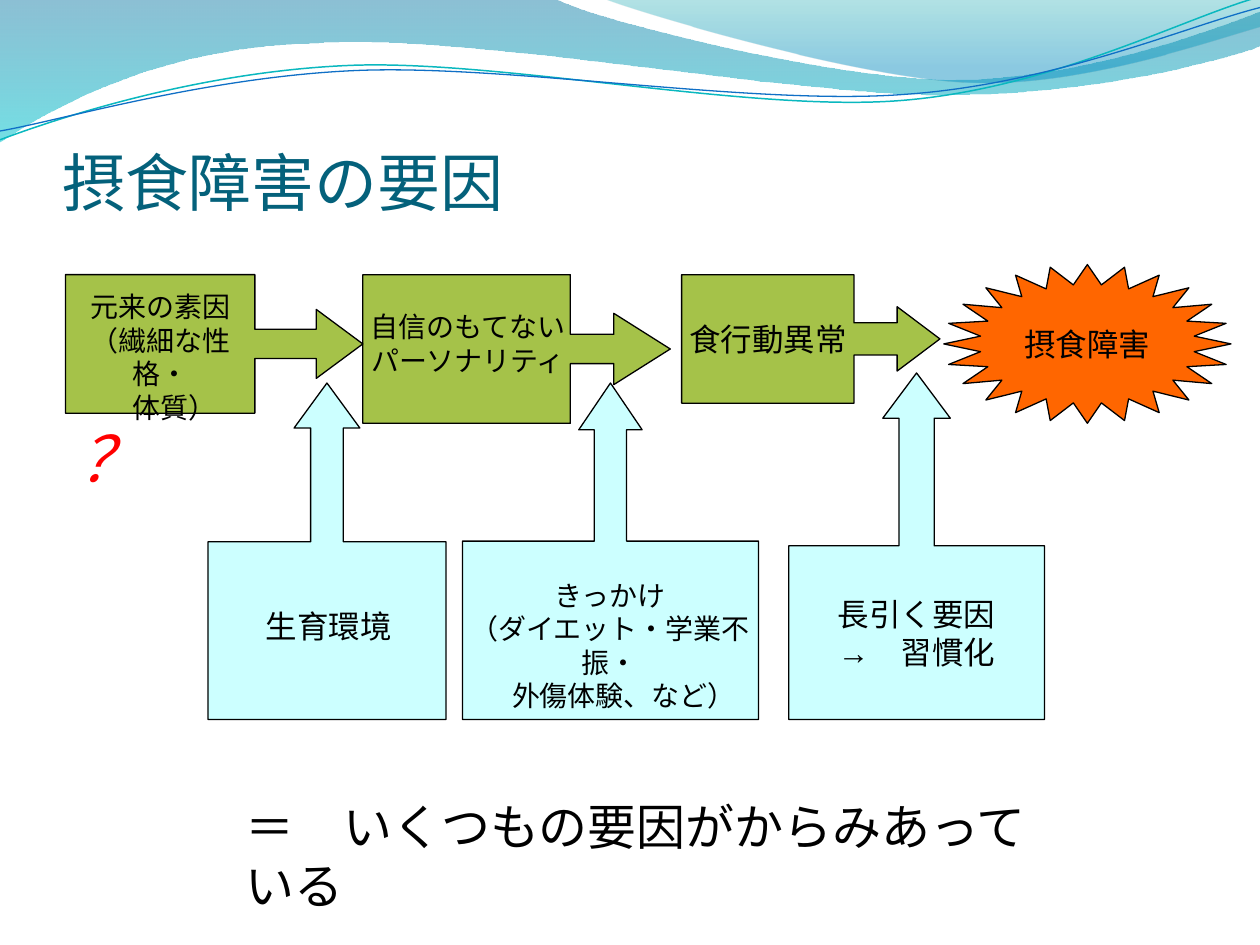
from lxml import etree
from pptx import Presentation
from pptx.dml.color import RGBColor
from pptx.enum.shapes import MSO_SHAPE
from pptx.enum.text import MSO_ANCHOR, MSO_AUTO_SIZE, PP_ALIGN
from pptx.oxml.ns import qn
from pptx.util import Inches, Pt

UP = MSO_SHAPE.UP_ARROW_CALLOUT
RIGHT = MSO_SHAPE.RIGHT_ARROW_CALLOUT
STAR = MSO_SHAPE.STAR_24_POINT
MIDDLE, TOP = MSO_ANCHOR.MIDDLE, MSO_ANCHOR.TOP
LEFT, CENTER = PP_ALIGN.LEFT, PP_ALIGN.CENTER
GROW = MSO_AUTO_SIZE.SHAPE_TO_FIT_TEXT

COLORS = {
    "cause": "A5C249", "factor": "CCFFFF", "result": "FF6600",
    "black": "000000", "title": "04617B", "question": "FF0000",
    "teal line": "0AB8BF", "blue line": "0F6FC6",
    "wave top": "0074A1", "wave bottom": "00C6CF",
    "crest top": "00A1A9", "crest bottom": "008BBF",
}


def color(name):
    return RGBColor.from_string(COLORS[name])


def write(shape, lines, size, font, ink="black", align=CENTER, **formats):
    frame = shape.text_frame
    for name, value in formats.items():
        setattr(frame, name, value)
    for index, line in enumerate(lines):
        paragraph = frame.paragraphs[0] if index == 0 else frame.add_paragraph()
        paragraph.alignment = align
        run = paragraph.add_run()
        run.text = line
        run.font.size = Pt(size)
        run.font.name = font
        run.font.color.rgb = color(ink)
        # Japanese characters take the East Asian font
        etree.SubElement(run.font._element, qn("a:ea")).set("typeface", font)


presentation = Presentation()
presentation.slide_width = Inches(10)
presentation.slide_height = Inches(7.5)
slide = presentation.slides.add_slide(presentation.slide_layouts[6])

# Waves: a pair is a straight segment, six numbers are a Bézier curve
waves = [
    {"outline": [(0, 0), (4.4, -0.01), (4.76, 0.17, 6.64, 0.63, 7.58, 0.63),
                 (8.53, 0.63, 9.58, 0.26, 10, 0.09), (10.01, 0.36),
                 (9.83, 0.44, 8.7, 0.76, 7.46, 0.75),
                 (6.22, 0.75, 3.82, 0.28, 2.57, 0.34),
                 (1.29, 0.36, 0.46, 0.83, -0.01, 1.13), (0, 0)],
     "stops": [(0, "wave top", 45), (1, "wave bottom", 55)]},
    {"outline": [(4.79, -0.01), (5.09, 0.11, 6.82, 0.62, 7.69, 0.65),
                 (8.56, 0.69, 9.61, 0.32, 10, 0.21), (10, 0), (4.79, -0.01)],
     "stops": [(0, "crest top", 30), (0.8, "crest bottom", 45)]},
    {"outline": [(0, 1.11), (0.48, 0.93, 1.58, 0.57, 2.77, 0.52),
                 (3.95, 0.47, 5.93, 0.89, 7.13, 0.8),
                 (8.33, 0.71, 9.38, 0.15, 9.98, -0.02)],
     "line": ("teal line", 0.85)},
    {"outline": [(0, 1.04), (0.47, 0.96, 1.64, 0.61, 2.83, 0.56),
                 (4.03, 0.51, 5.97, 0.84, 7.17, 0.75),
                 (8.36, 0.67, 9.41, 0.21, 10, 0.06)],
     "line": ("blue line", 0.75)},
]
for wave in waves:
    outline = wave["outline"]
    ends = [(Inches(segment[-2]), Inches(segment[-1])) for segment in outline]
    builder = slide.shapes.build_freeform(*ends[0])
    builder.add_line_segments(ends[1:], close="stops" in wave)
    shape = builder.convert_to_shape()
    shape.shadow.inherit = False
    # Turn the segments that have control points into curves
    segments = list(shape._element.iter(qn("a:lnTo")))
    for element, segment in zip(segments, outline[1:]):
        if len(segment) == 2:
            continue
        element.tag = qn("a:cubicBezTo")
        for index, (x, y) in enumerate((segment[:2], segment[2:4])):
            point = etree.Element(qn("a:pt"))
            point.set("x", str(Inches(x) - shape.left))
            point.set("y", str(Inches(y) - shape.top))
            element.insert(index, point)
    if "line" in wave:
        ink, width = wave["line"]
        shape.fill.background()
        shape.line.color.rgb = color(ink)
        shape.line.width = Pt(width)
        continue
    shape.line.fill.background()
    shape.fill.gradient()
    shape.fill.gradient_angle = 270
    for stop, (position, ink, opacity) in zip(shape.fill.gradient_stops, wave["stops"]):
        stop.color.rgb = color(ink)
        stop.position = position
    # Opacity of the gradient stops
    for element, stop in zip(shape._element.iter(qn("a:srgbClr")), wave["stops"]):
        etree.SubElement(element, qn("a:alpha")).set("val", str(stop[2] * 1000))

# Callouts and star: preset, fill, box, adjustments, own text
diagram = [
    (UP, "factor", (1.65, 3.04, 1.89, 2.67), (0.137, 0.138, 0.189, 0.528), []),
    (STAR, "result", (7.49, 2.1, 2.28, 1.26), (0.375,), ["摂食障害"]),
    (UP, "factor", (3.67, 3.04, 2.35, 2.67), (0.109, 0.107, 0.158, 0.53), []),
    (RIGHT, "cause", (2.88, 2.18, 2.44, 1.18), (0.197, 0.24, 0.38, 0.675), []),
    (RIGHT, "cause", (0.52, 2.18, 2.36, 1.1), (0.211, 0.249, 0.336, 0.637), []),
    (RIGHT, "cause", (5.41, 2.18, 2.05, 1.02), (0.25, 0.25, 0.333, 0.667),
     ["食行動異常"]),
    (UP, "factor", (6.26, 2.96, 2.03, 2.75), (0.138, 0.132, 0.177, 0.501),
     ["長引く要因", "→　習慣化"]),
]
for preset, fill, box, adjustments, lines in diagram:
    shape = slide.shapes.add_shape(preset, *map(Inches, box))
    shape.shadow.inherit = False
    for index, value in enumerate(adjustments):
        shape.adjustments[index] = value
    shape.fill.solid()
    shape.fill.fore_color.rgb = color(fill)
    shape.line.color.rgb = color("black")
    shape.line.width = Pt(0.75)
    write(shape, lines, 18, "Arial", word_wrap=False, vertical_anchor=MIDDLE)

# Title
title = slide.shapes.add_textbox(Inches(0.5), Inches(0.79), Inches(9), Inches(1.25))
write(title, ["摂食障害の要因"], 36, "Calibri", "title", LEFT, word_wrap=True,
      vertical_anchor=MIDDLE, margin_left=0, margin_right=0, margin_bottom=0)

# Labels over the callouts, and the conclusion
labels = [
    ((0.52, 2.25, 1.51, 0.9), ["元来の素因", "（繊細な性格・", "　体質）"],
     16, "Arial Narrow", CENTER),
    ((1.94, 4.77, 1.34, 0.4), ["生育環境"], 18, "Arial Narrow", CENTER),
    ((2.73, 2.41, 1.97, 0.64), ["自信のもてない", "パーソナリティ"],
     16, "Arial Narrow", CENTER),
    ((3.59, 4.54, 2.5, 0.91), ["きっかけ", "（ダイエット・学業不振・", "　外傷体験、など）"],
     16, "Arial Narrow", CENTER),
    ((1.85, 6.27, 6.44, 0.57), ["＝　いくつもの要因がからみあっている"],
     28, "Vollkorn", LEFT),
]
for box, lines, size, font, align in labels:
    label = slide.shapes.add_textbox(*map(Inches, box))
    write(label, lines, size, font, align=align,
          word_wrap=True, auto_size=GROW, vertical_anchor=TOP)

# Question mark
question = slide.shapes.add_textbox(Inches(0.52), Inches(3.28), Inches(0.71), Inches(0.71))
write(question, ["？"], 36, "Cabin", "question", word_wrap=True, auto_size=GROW)
paragraph = question.text_frame.paragraphs[0]
paragraph.space_before = Pt(7)
paragraph.runs[0].font.italic = True

presentation.save("out.pptx")
